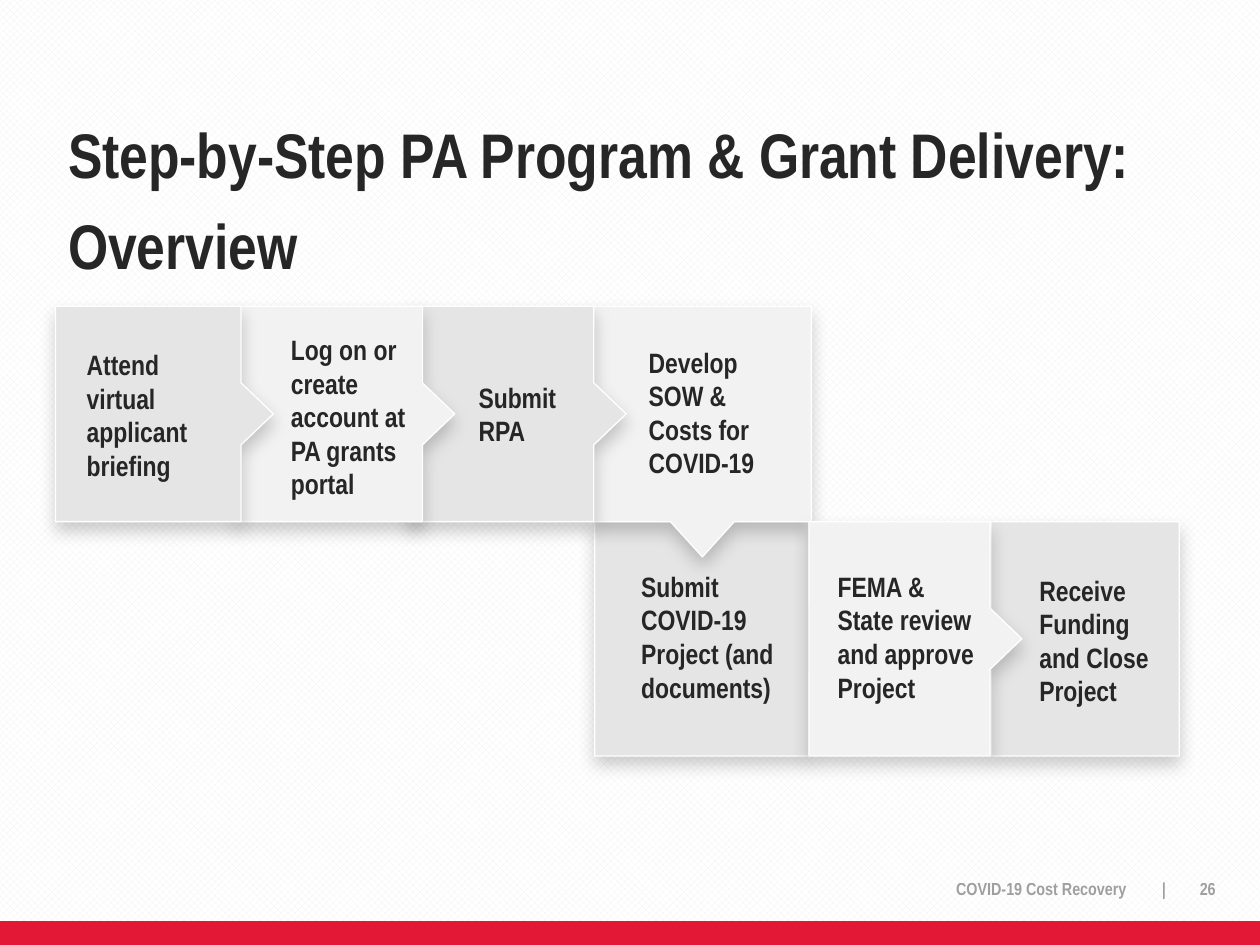
from dataclasses import dataclass

from lxml import etree
from pptx import Presentation
from pptx import util as u
from pptx.dml.color import RGBColor
from pptx.enum import dml, shapes, text
from pptx.oxml import ns

COLS, ROWS = 100, 75
RIGHT = shapes.MSO_SHAPE.RIGHT_ARROW_CALLOUT
DOWN = shapes.MSO_SHAPE.DOWN_ARROW_CALLOUT
ADJUST = {RIGHT: (0.5, 0.144, 0.15, 0.871), DOWN: (0.5, 0.146, 0.161, 0.895)}


@dataclass(frozen=True)
class Theme:
    font: str = "Arial Narrow"
    ink: str = "262626"
    muted: str = "808080"
    paper: str = "FFFFFF"
    light: str = "F2F2F2"
    dark: str = "E5E5E5"
    accent: str = "E31836"
    head: int = 36
    body: int = 16
    foot: int = 10


def rgb(code):
    return RGBColor.from_string(code)


def add(parent, tag, **attrs):
    """Append a DrawingML element to parent."""
    node = etree.SubElement(parent, ns.qn("a:" + tag))
    for key, value in attrs.items():
        node.set(key, str(value))
    return node


class Deck:
    """Holds the theme and the current slide; lengths are grid columns and rows."""

    def __init__(self, theme):
        self.theme = theme
        self.prs = Presentation()
        self.prs.slide_width, self.prs.slide_height = u.Inches(10), u.Inches(7.5)
        self.slide = self.prs.slides.add_slide(self.prs.slide_layouts[5])
        fill = self.slide.background.fill
        fill.patterned()
        fill.pattern = dml.MSO_PATTERN.from_xml("openDmnd")
        fill.fore_color.rgb, fill.back_color.rgb = rgb(theme.light), rgb(theme.paper)

    def box(self, x, y, w, h):
        """Turn grid units into left, top, width and height."""
        col, row = self.prs.slide_width / COLS, self.prs.slide_height / ROWS
        return [u.Emu(round(n)) for n in (x * col, y * row, w * col, h * row)]

    def style(self, para, size, color):
        font = para.font
        font.name, font.size, font.bold = self.theme.font, u.Pt(size), True
        font.color.rgb = rgb(color)

    def title(self, words, *area):
        shape = self.slide.shapes.title
        shape.left, shape.top, shape.width, shape.height = self.box(*area)
        frame = shape.text_frame
        frame.text = words
        frame.auto_size = text.MSO_AUTO_SIZE.NONE
        frame.vertical_anchor = text.MSO_ANCHOR.TOP
        para = frame.paragraphs[0]
        para.alignment, para.line_spacing = text.PP_ALIGN.LEFT, 1.2
        self.style(para, self.theme.head, self.theme.ink)

    def shape(self, kind, fill, *area):
        shape = self.slide.shapes.add_shape(kind, *self.box(*area))
        shape.shadow.inherit = False
        shape.fill.solid()
        shape.fill.fore_color.rgb = rgb(fill)
        return shape

    def band(self, *area):
        self.shape(shapes.MSO_SHAPE.RECTANGLE, self.theme.accent, *area).line.fill.background()

    def callout(self, kind, fill, area, turn=0):
        shape = self.shape(kind, fill, *area)
        shape.rotation = turn
        for i, value in enumerate(ADJUST[kind]):
            shape.adjustments[i] = value
        shape.line.color.rgb, shape.line.width = rgb(self.theme.paper), u.Pt(0.75)
        glow = add(shape.element.spPr.find(ns.qn("a:effectLst")), "outerShdw",
                   blurRad=u.Pt(10), dist=u.Pt(5), dir=90 * 60000,
                   algn="ctr", rotWithShape=0)
        add(add(glow, "srgbClr", val="000000"), "alpha", val=20000)

    def text(self, words, *area):
        frame = self.slide.shapes.add_textbox(*self.box(*area)).text_frame
        frame.word_wrap = True
        frame.text = words
        return frame.paragraphs[0]

    def label(self, words, *area):
        para = self.text(words, *area)
        para.space_after = u.Pt(6)
        self.style(para, self.theme.body, self.theme.ink)

    def footer(self, words, tabs, *area):
        para = self.text(words, *area)
        stops = add(para._p.get_or_add_pPr(), "tabLst")
        for inch, side in tabs:
            add(stops, "tab", pos=u.Inches(inch), algn=side)
        self.style(para, self.theme.foot, self.theme.muted)
        for tint in para._p.iter(ns.qn("a:srgbClr")):
            add(tint, "alpha", val=75000)


def main():
    theme = Theme()
    deck = Deck(theme)
    top, high = 24.3, 17.1
    low, deep, wide = top + high, 18.6, 17.3

    deck.band(0, 73.1, COLS, 1.9)
    deck.title("Step-by-Step PA Program & Grant Delivery: Overview", 4.4, 7.5, 91.2, 8.5)

    # Back to front, so that each arrow lies over the step it points to.
    for call in (
        (RIGHT, theme.dark, (76, low, 17.6, deep), 180),
        (RIGHT, theme.dark, (47.2, low, 19.8, deep)),
        (DOWN, theme.light, (47.1, top, wide, 19.9)),
        (RIGHT, theme.dark, (32.4, top, wide, high)),
        (RIGHT, theme.light, (18.8, top, wide, high)),
        (RIGHT, theme.light, (64.2, low, 16.9, deep)),
        (RIGHT, theme.dark, (4.4, top, wide, high)),
    ):
        deck.callout(*call)

    for step in (
        ("Attend virtual applicant briefing", 5.9, 27.1, 11.7, 11.6),
        ("Log on or create account at PA grants portal", 22.1, 25.9, 12.9, 14.1),
        ("Submit RPA", 37, 29.7, 8.6, 6.2),
        ("Develop SOW & Costs for COVID-19", 50.5, 26.9, 12.9, 11.6),
        ("Submit COVID-19 Project (and documents)", 49.9, 44.7, 12.9, 11.6),
        ("FEMA & State review and approve Project", 65.5, 44.7, 13.3, 8.4),
        ("Receive Funding and Close Project", 81.5, 45, 12.5, 6.8),
    ):
        deck.label(*step)

    deck.footer("\tCOVID-19 Cost Recovery\t|\t26",
                ((3.88, "r"), (4.18, "ctr"), (4.59, "r")), 49.6, 69.2, 48, 3.2)
    deck.prs.save("out.pptx")


if __name__ == "__main__":
    main()
